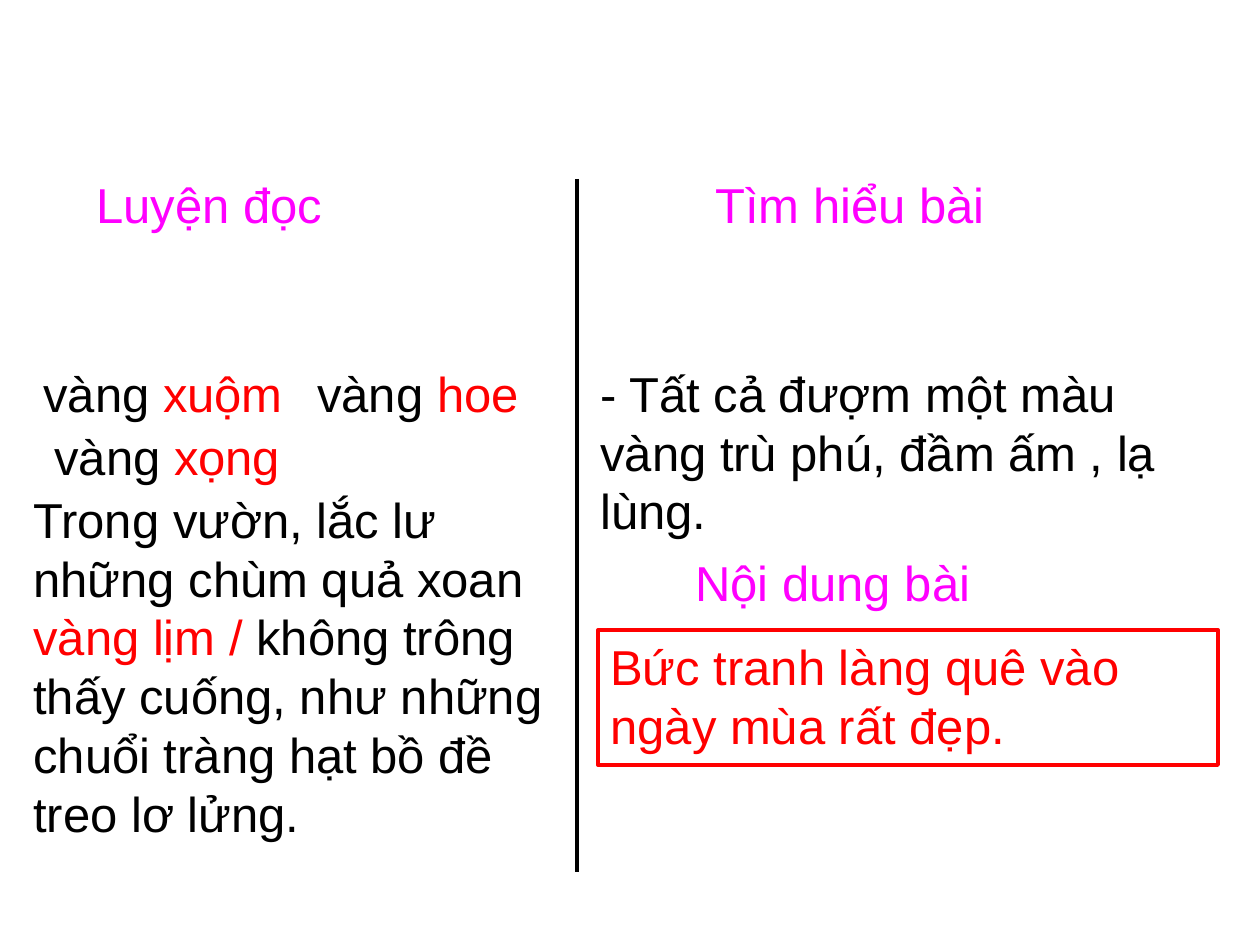
from dataclasses import dataclass

from lxml import etree
from pptx import Presentation
from pptx import util as u
from pptx.dml.color import RGBColor
from pptx.enum import shapes, text
from pptx.oxml.ns import qn

PX = u.Inches(1) / 126


@dataclass(frozen=True)
class Theme:
    font: str = "Arial"
    size: int = 28
    line: float = 2.25
    ink: RGBColor = RGBColor(0, 0, 0)
    accent: RGBColor = RGBColor(255, 0, 0)
    heading: RGBColor = RGBColor(255, 0, 255)


T = Theme()


def px(*lengths):
    return [u.Emu(round(n * PX)) for n in lengths]


def write(sp, runs, wrap=True):
    tf = sp.text_frame
    tf.word_wrap = wrap
    tf.auto_size = text.MSO_AUTO_SIZE.SHAPE_TO_FIT_TEXT
    tf.vertical_anchor = text.MSO_ANCHOR.TOP
    p = tf.paragraphs[0]
    p.alignment = text.PP_ALIGN.LEFT
    p.font.name, p.font.size = T.font, u.Pt(T.size)
    if len(runs) == 1:
        p.font.color.rgb = runs[0][1]
    for words, color in runs:
        r = p.add_run()
        r.text = words
        if len(runs) > 1:
            r.font.color.rgb = color


def add_text(s, box, *runs, wrap=True):
    write(s.shapes.add_textbox(*px(*box)), runs, wrap)


def add_framed(s, box, words):
    sp = s.shapes.add_shape(shapes.MSO_SHAPE.RECTANGLE, *px(*box))
    sp.shadow.inherit = False
    sp.fill.background()
    sp.line.color.rgb = T.accent
    sp.line.width = u.Pt(T.line)
    write(sp, [(words, T.accent)])


def add_divider(s, x, top, bottom):
    ln = s.shapes.add_connector(shapes.MSO_CONNECTOR.STRAIGHT, *px(x, top, x, bottom))
    ln.line.color.rgb = T.ink
    ln.line.width = u.Pt(T.line)
    etree.SubElement(ln._element.spPr, qn("a:effectLst"))


def add_reading(s, x, y):
    add_text(s, (x + 63, y, 368, 72), ("Luyện đọc", T.heading))
    for dx, dy, w, ending in ((10, 189, 266, "xuộm"), (284, 189, 228, "hoe"), (21, 252, 252, "xọng")):
        add_text(s, (x + dx, y + dy, w, 72), ("vàng ", T.ink), (ending, T.accent), wrap=False)
    add_text(
        s, (x, y + 315, 538, 365),
        ("Trong vườn, lắc lư những chùm quả xoan ", T.ink),
        ("vàng lịm /", T.accent),
        (" không trông thấy cuống, như những chuổi tràng hạt bồ đề treo lơ lửng.", T.ink),
    )


def add_meaning(s, x, y):
    add_text(s, (x + 115, y, 315, 72), ("Tìm hiểu bài", T.heading))
    add_text(s, (x, y + 189, 638, 189),
             ("- Tất cả đượm một màu vàng trù phú, đầm ấm , lạ lùng.", T.ink))
    add_text(s, (x + 95, y + 378, 315, 72), ("Nội dung bài", T.heading))
    add_framed(s, (x + 10, y + 462, 620, 135), "Bức tranh làng quê vào ngày mùa rất đẹp.")


def main():
    prs = Presentation()
    prs.slide_width, prs.slide_height = px(1260, 945)
    s = prs.slides.add_slide(prs.slide_layouts[6])
    add_divider(s, 577, 179, 872)
    add_reading(s, 21, 168)
    add_meaning(s, 588, 168)
    prs.save("out.pptx")


if __name__ == "__main__":
    main()
